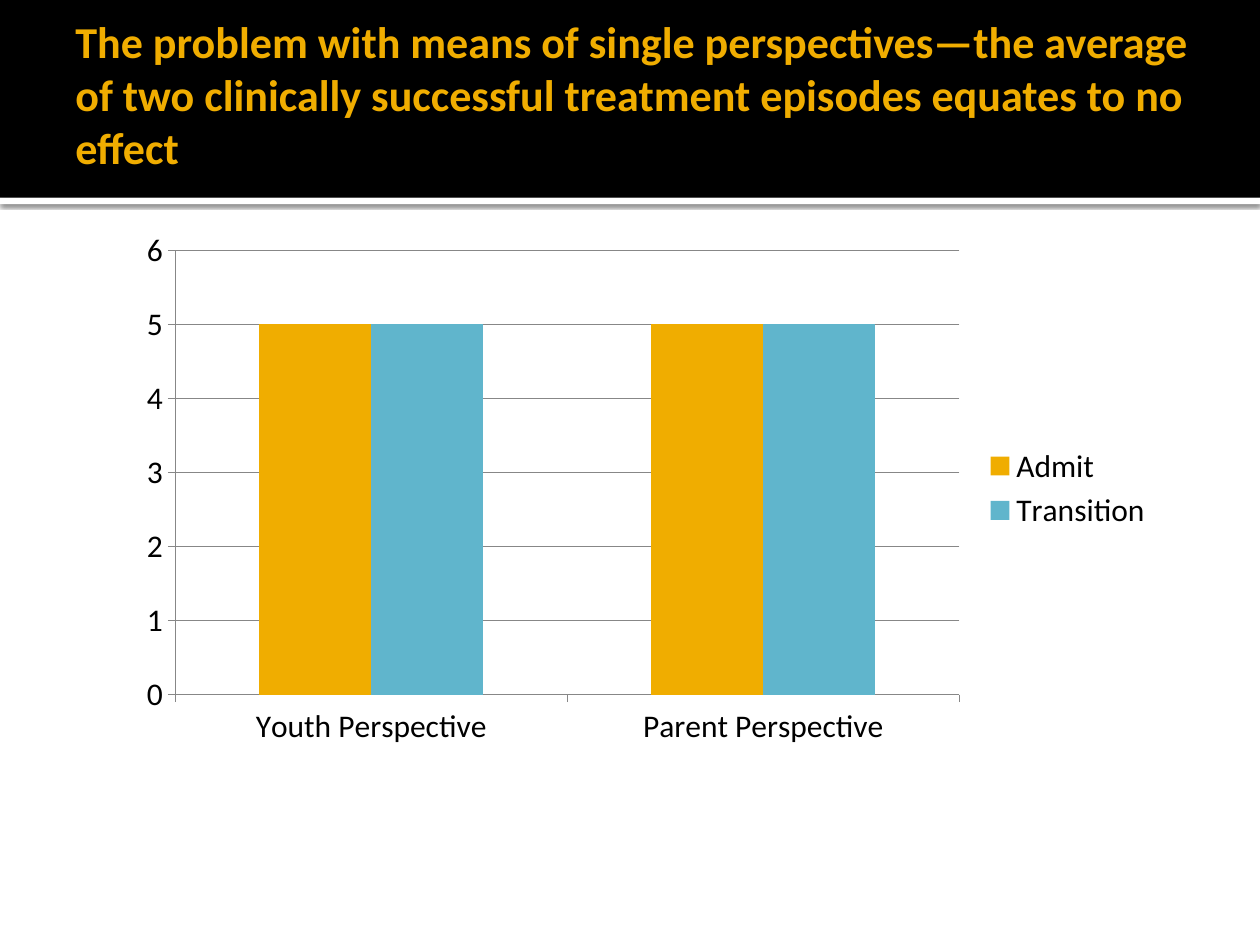
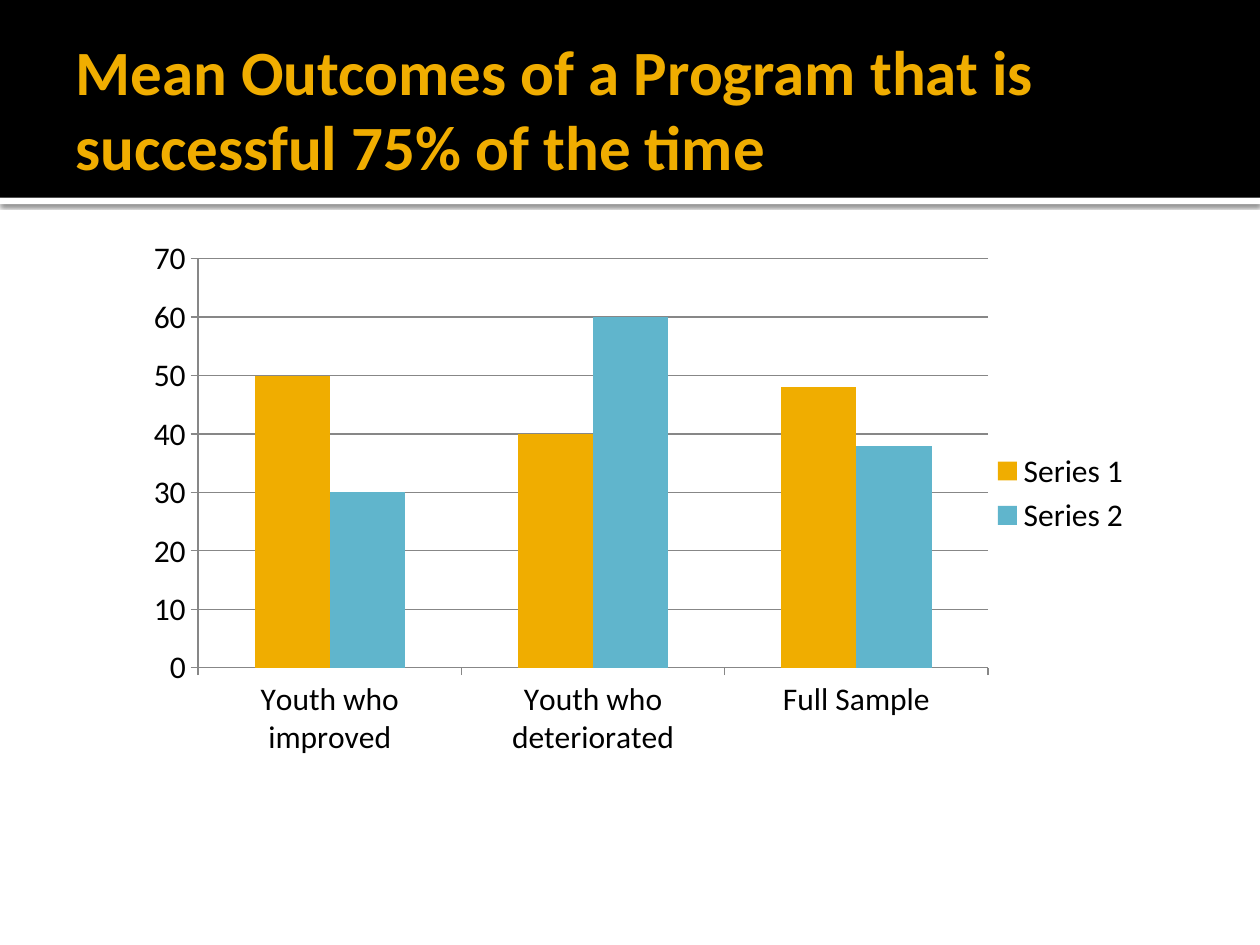
from lxml.etree import SubElement
from pptx import Presentation
from pptx.chart.data import CategoryChartData
from pptx.dml.color import RGBColor
from pptx.enum.chart import XL_CHART_TYPE, XL_LEGEND_POSITION, XL_TICK_MARK
from pptx.enum.shapes import MSO_SHAPE
from pptx.enum.text import MSO_ANCHOR
from pptx.oxml.ns import qn
from pptx.util import Inches, Pt

FONT = "Calibri"
BLACK, WHITE, GOLD, BLUE, GREY = "000000", "FFFFFF", "F0AD00", "60B5CC", "878787"
SERIES_COLORS = (GOLD, BLUE)
BAND_HEIGHT, STRIPE_HEIGHT = 1.57, 0.05

SLIDES = [
    {
        "title": "The problem with means of single perspectives—the average of two "
                 "clinically successful treatment episodes equates to no effect",
        "title_at": (0.5, 0.08, 9, 1.33),
        "title_size": 25.2,
        "chart_at": (1, 1.75, 8.25, 4.25),
        "categories": ["Youth Perspective", "Parent Perspective"],
        "series": {"Admit": (5, 5), "Transition": (5, 5)},
        "plot": None,
    },
    {
        "title": "Mean Outcomes of a Program that is successful 75% of the time",
        "title_at": (0.5, 0.17, 9, 1.37),
        "title_size": 36,
        "chart_at": (0.83, 1.75, 8.25, 4.33),
        "categories": ["Youth who improved", "Youth who deteriorated", "Full Sample"],
        "series": {"Series 1": (50, 40, 48), "Series 2": (30, 60, 38)},
        "plot": {"x": 0.09, "y": 0.07, "w": 0.76, "h": 0.75},
    },
]


def color(hex_string):
    return RGBColor.from_string(hex_string)


def inches(lengths):
    return [Inches(length) for length in lengths]


def add_bar(page, top, height, fill):
    bar = page.shapes.add_shape(MSO_SHAPE.RECTANGLE, *inches((0, top, 10, height)))
    bar.shadow.inherit = False
    bar.fill.solid()
    bar.fill.fore_color.rgb = color(fill)
    bar.line.fill.background()
    return bar


def add_shadow(shape, blur, distance, opacity):
    """Give the shape a black shadow that falls straight down."""
    effects = shape.element.spPr.find(qn("a:effectLst"))
    shadow = SubElement(effects, qn("a:outerShdw"), blurRad=str(Pt(blur)),
                        dist=str(Pt(distance)), dir="5400000", rotWithShape="0")
    tint = SubElement(shadow, qn("a:srgbClr"), val=BLACK)
    SubElement(tint, qn("a:alpha"), val=str(opacity * 1000))


def add_header(page):
    stripe = add_bar(page, BAND_HEIGHT, STRIPE_HEIGHT, WHITE)
    add_shadow(stripe, blur=2.5, distance=0.8, opacity=60)
    add_bar(page, 0, BAND_HEIGHT, BLACK)


def add_text(page, text, at, size, fill, bold=False):
    box = page.shapes.add_textbox(*inches(at))
    frame = box.text_frame
    frame.word_wrap = True
    frame.vertical_anchor = MSO_ANCHOR.MIDDLE
    frame.margin_left = Inches(0.1)
    frame.margin_right = frame.margin_top = frame.margin_bottom = Inches(0.05)
    span = frame.paragraphs[0].add_run()
    span.text = text
    span.font.name = FONT
    span.font.size = Pt(size)
    span.font.bold = bold
    span.font.color.rgb = color(fill)


def place_plot(chart, plot):
    """Fix the inner plot area, in fractions of the chart."""
    area = chart.element.find(f".//{qn('c:plotArea')}")
    layout = area.find(qn("c:layout"))
    if layout is None:
        layout = SubElement(area, qn("c:layout"))
        area.insert(0, layout)
    manual = SubElement(layout, qn("c:manualLayout"))
    SubElement(manual, qn("c:layoutTarget"), val="inner")
    for side in "xy":
        SubElement(manual, qn(f"c:{side}Mode"), val="edge")
    for name, fraction in plot.items():
        SubElement(manual, qn(f"c:{name}"), val=str(fraction))


def add_columns(page, at, categories, series, plot):
    data = CategoryChartData()
    data.categories = categories
    for name, values in series.items():
        data.add_series(name, values)
    chart = page.shapes.add_chart(XL_CHART_TYPE.COLUMN_CLUSTERED, *inches(at), data).chart

    chart.has_title = False
    chart.font.name = FONT
    chart.font.size = Pt(18)
    chart.font.color.rgb = color(BLACK)
    chart.has_legend = True
    chart.legend.position = XL_LEGEND_POSITION.RIGHT
    chart.legend.include_in_layout = False

    columns = chart.plots[0]
    columns.gap_width = 150
    columns.overlap = 0
    columns.vary_by_categories = False
    for group, fill in zip(columns.series, SERIES_COLORS):
        group.format.fill.solid()
        group.format.fill.fore_color.rgb = color(fill)

    for axis in (chart.category_axis, chart.value_axis):
        axis.major_tick_mark = XL_TICK_MARK.OUTSIDE
        axis.minor_tick_mark = XL_TICK_MARK.NONE
        axis.format.line.color.rgb = color(GREY)
    chart.value_axis.has_major_gridlines = True
    chart.value_axis.major_gridlines.format.line.color.rgb = color(GREY)
    if plot:
        place_plot(chart, plot)


def main():
    deck = Presentation()
    deck.slide_width, deck.slide_height = inches((10, 7.5))
    for content in SLIDES:
        page = deck.slides.add_slide(deck.slide_layouts[6])
        add_header(page)
        add_text(page, content["title"], content["title_at"],
                 size=content["title_size"], fill=GOLD, bold=True)
        add_columns(page, content["chart_at"], content["categories"],
                    content["series"], content["plot"])
    deck.save("out.pptx")


if __name__ == "__main__":
    main()
